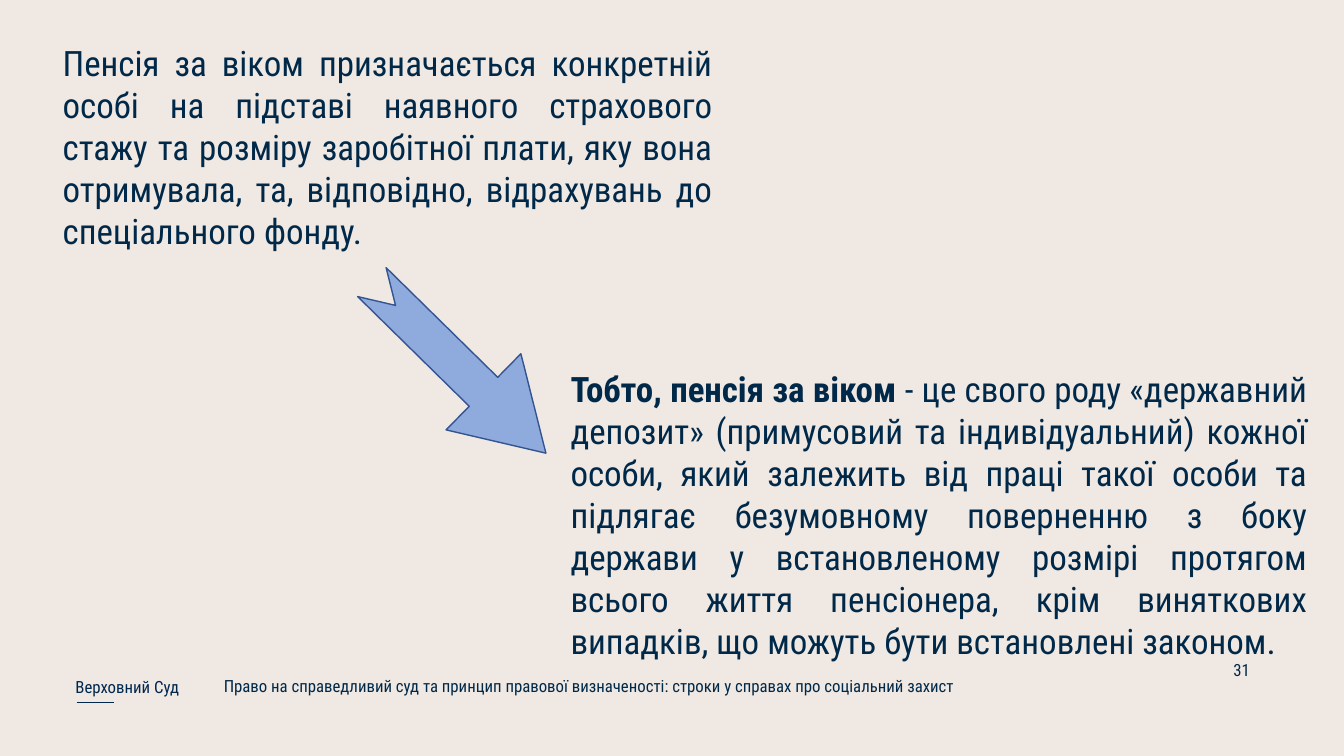
from dataclasses import dataclass

from lxml import etree
from pptx import Presentation
from pptx import util as u
from pptx.dml.color import RGBColor
from pptx.enum import shapes, text
from pptx.oxml.ns import qn
from pptx.slide import Slide

FONT = "Roboto Condensed"
BACKGROUND = RGBColor(0xF0, 0xE8, 0xE3)
NAVY = RGBColor(0x00, 0x29, 0x49)
FOOTER_NAVY = RGBColor(0x00, 0x27, 0x4E)
ARROW_FILL = RGBColor(0x8F, 0xAA, 0xDC)
ARROW_LINE = RGBColor(0x32, 0x54, 0x91)

BODY_SIZE = 25
FOOTER_SIZE = 12


@dataclass(frozen=True)
class Span:
    wording: str
    bold: bool = False


@dataclass(frozen=True)
class TextBlock:
    """A one-paragraph text box; lengths in centimetres, sizes in points."""
    left: float
    top: float
    width: float
    height: float
    spans: tuple[Span, ...]
    size: float = FOOTER_SIZE
    color: RGBColor = NAVY
    align: text.PP_ALIGN = text.PP_ALIGN.JUSTIFY
    anchor: text.MSO_ANCHOR = text.MSO_ANCHOR.TOP
    line_spacing: float = 1.0
    space_after: float = 0
    grows: bool = False


TEXT_BLOCKS = (
    TextBlock(
        1.33, 0.93, 16.87, 5.59,
        (Span("Пенсія за віком призначається конкретній особі на підставі "
              "наявного страхового стажу та розміру заробітної плати, яку вона "
              "отримувала, та, відповідно, відрахувань до спеціального фонду."),),
        size=BODY_SIZE, space_after=12, grows=True),
    TextBlock(
        14.13, 9.14, 19.06, 7.75,
        (Span("Тобто, пенсія за віком ", bold=True),
         Span("- це свого роду «державний депозит» (примусовий та "
              "індивідуальний) кожної особи, який залежить від праці такої особи "
              "та підлягає безумовному поверненню з боку держави у встановленому "
              "розмірі протягом всього життя пенсіонера, крім виняткових "
              "випадків, що можуть бути встановлені законом.")),
        size=BODY_SIZE, space_after=12, grows=True),
    TextBlock(
        1.65, 16.7, 3.23, 1.12, (Span("Верховний Суд"),),
        color=FOOTER_NAVY, align=text.PP_ALIGN.LEFT,
        anchor=text.MSO_ANCHOR.MIDDLE, line_spacing=1.14),
    TextBlock(
        5.39, 16.97, 25.12, 0.89,
        (Span("Право на справедливий суд та принцип правової визначеності: "
              "строки у справах про соціальний захист"),),
        line_spacing=0.9),
    TextBlock(
        30.25, 16.42, 1.5, 0.91, (Span("31"),),
        align=text.PP_ALIGN.RIGHT, anchor=text.MSO_ANCHOR.MIDDLE),
)


def add_text_block(page: Slide, block: TextBlock) -> None:
    box = page.shapes.add_textbox(u.Cm(block.left), u.Cm(block.top),
                                  u.Cm(block.width), u.Cm(block.height))
    frame = box.text_frame
    frame.word_wrap = True
    frame.vertical_anchor = block.anchor
    if block.grows:
        frame.auto_size = text.MSO_AUTO_SIZE.SHAPE_TO_FIT_TEXT
    para = frame.paragraphs[0]
    para.alignment = block.align
    para.line_spacing = block.line_spacing
    para.space_after = u.Pt(block.space_after)
    for span in block.spans:
        run = para.add_run()
        run.text = span.wording
        run.font.name = FONT
        run.font.size = u.Pt(block.size)
        run.font.bold = span.bold
        run.font.color.rgb = block.color


def add_conclusion_arrow(page: Slide) -> None:
    arrow = page.shapes.add_shape(shapes.MSO_SHAPE.NOTCHED_RIGHT_ARROW,
                                  u.Cm(8.49), u.Cm(7.92), u.Cm(6.15), u.Cm(2.69))
    arrow.rotation = 44.5
    arrow.adjustments[0] = 0.38
    arrow.adjustments[1] = 0.82
    arrow.shadow.inherit = False
    arrow.fill.solid()
    arrow.fill.fore_color.rgb = ARROW_FILL
    arrow.line.color.rgb = ARROW_LINE
    arrow.line.width = u.Pt(1)


def add_footer_rule(page: Slide) -> None:
    rule = page.shapes.add_connector(shapes.MSO_CONNECTOR.STRAIGHT,
                                     u.Cm(1.93), u.Cm(17.7), u.Cm(2.87), u.Cm(17.7))
    rule.line.color.rgb = FOOTER_NAVY
    rule.line.width = u.Pt(1.12)
    etree.SubElement(rule._element.spPr, qn("a:effectLst"))


def main() -> None:
    deck = Presentation()
    deck.slide_width = u.Cm(33.87)
    deck.slide_height = u.Cm(19.05)
    page = deck.slides.add_slide(deck.slide_layouts.get_by_name("Blank"))
    page.background.fill.solid()
    page.background.fill.fore_color.rgb = BACKGROUND
    for block in TEXT_BLOCKS:
        add_text_block(page, block)
    add_conclusion_arrow(page)
    add_footer_rule(page)
    deck.save("out.pptx")


if __name__ == "__main__":
    main()
